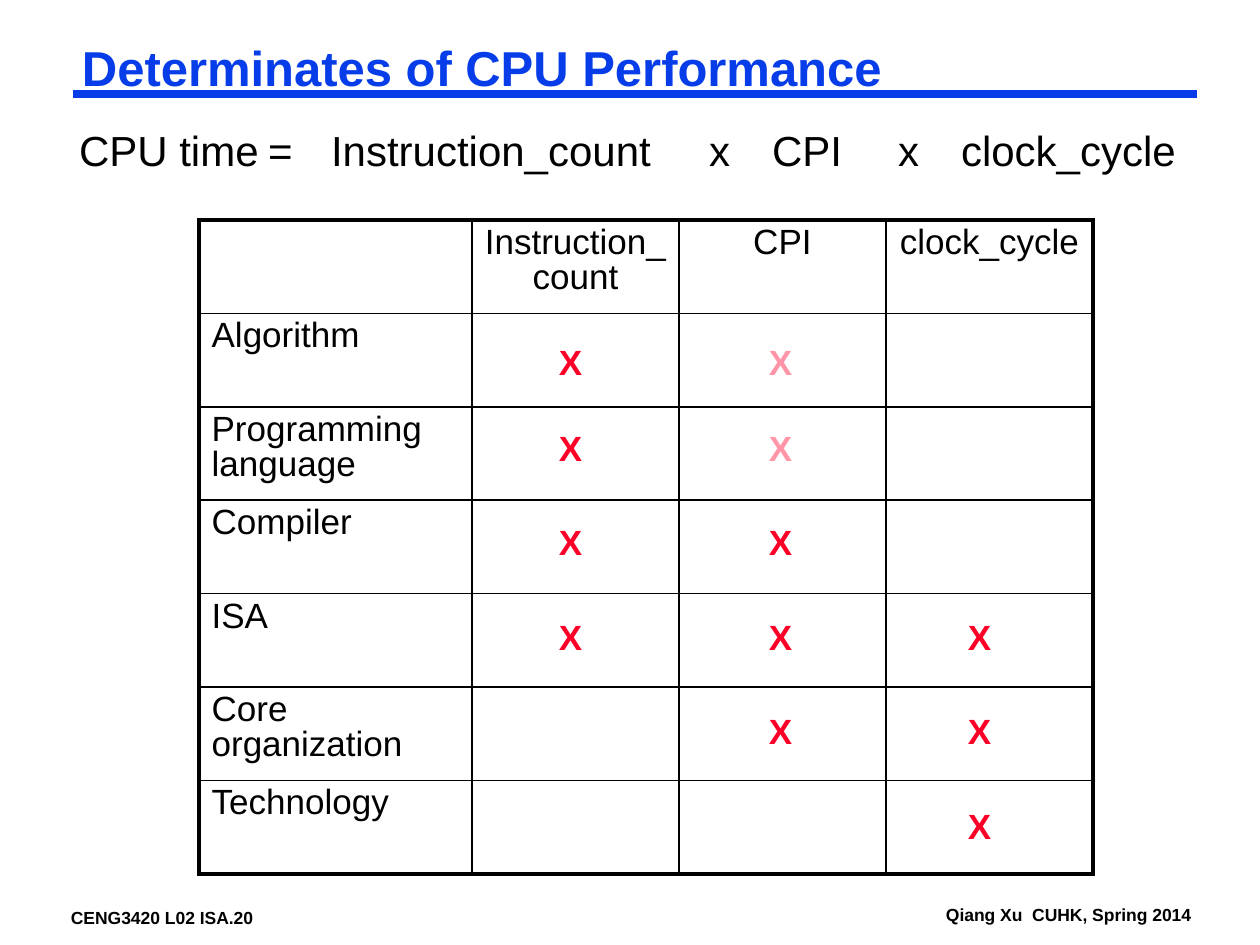
from lxml.etree import SubElement
from pptx import Presentation
from pptx.dml.color import RGBColor as RGB
from pptx.enum.shapes import MSO_CONNECTOR as Conn
from pptx.enum.text import MSO_ANCHOR as Anchor, MSO_AUTO_SIZE as Auto, PP_ALIGN as Align
from pptx.oxml.ns import qn
from pptx.util import Emu, Pt

COLORS = {"blue": "063DE8", "black": "000000", "red": "FC0128", "pink": "FF95A7"}
HEADS = ["", "Instruction_count", "CPI", "clock_cycle"]
# Row label and its marks: X strong, x weak, - none
ROWS = [
    ("Algorithm", "Xx-"),
    ("Programming language", "Xx-"),
    ("Compiler", "XX-"),
    ("ISA", "XXX"),
    ("Core organization", "-XX"),
    ("Technology", "--X"),
]
MARKS = {"X": "red", "x": "pink"}
MARK_X = [546, 756, 955]
MARK_Y = [334, 420, 514, 609, 703, 798]
FORMULA = [("CPU time", 79), ("=", 328), ("Instruction_count", 376), ("x", 719),
           ("CPI", 763), ("x", 857), ("clock_cycle", 913)]


def px(n):
    return Emu(round(n * 914400 / 126))


def color(name):
    return RGB.from_string(COLORS[name])


class Deck:
    font = "Arial"
    tight = (9, 4, 9, 4)
    roomy = (13, 6, 13, 6)

    def __init__(self):
        self.prs = Presentation()
        self.prs.slide_width, self.prs.slide_height = px(1260), px(945)
        self.slide = self.prs.slides.add_slide(self.prs.slide_layouts[1])
        self.shapes = self.slide.shapes

    def fill_text(self, frame, text, size, hue="black", bold=False, lead=1.0, align=Align.LEFT):
        para = frame.paragraphs[0]
        form = {"alignment": align, "line_spacing": lead, "space_before": Pt(0)}
        for key, val in form.items():
            setattr(para, key, val)
        run = para.add_run()
        run.text = text
        look = {"name": self.font, "size": Pt(size), "bold": bold}
        for key, val in look.items():
            setattr(run.font, key, val)
        run.font.color.rgb = color(hue)
        return para

    def frame(self, shape, insets, wrap):
        frame = shape.text_frame
        form = {"word_wrap": wrap, "auto_size": Auto.SHAPE_TO_FIT_TEXT,
                "vertical_anchor": Anchor.TOP}
        sides = ("margin_left", "margin_top", "margin_right", "margin_bottom")
        form.update(zip(sides, map(px, insets)))
        for key, val in form.items():
            setattr(frame, key, val)
        return frame

    def holder(self, index, box, insets, wrap):
        shape = self.slide.placeholders[index]
        for key, val in zip(("left", "top", "width", "height"), box):
            setattr(shape, key, px(val))
        return self.frame(shape, insets, wrap)

    def title(self, text, box):
        frame = self.holder(0, box, self.tight, False)
        self.fill_text(frame, text, 28, "blue", True, 0.87)

    def formula(self, parts, box):
        """Set the parts on one line, each at its own tab stop."""
        start = parts[0][1]
        frame = self.holder(1, box, (start, 4, 9, 4), True)
        text = "\t".join(part for part, _ in parts)
        props = self.fill_text(frame, text, 24, lead=0.9)._p.get_or_add_pPr()
        props.set("marL", "0")
        props.set("indent", "0")
        SubElement(props, qn("a:buNone"))
        stops = SubElement(props, qn("a:tabLst"))
        for _, left in parts[1:]:
            SubElement(stops, qn("a:tab"), pos=str(px(left - start)), algn="l")

    def text(self, text, box, size, hue="black", insets=tight, wrap=True):
        shape = self.shapes.add_textbox(*map(px, box))
        self.fill_text(self.frame(shape, insets, wrap), text, size, hue, True)

    def line(self, ends, width, hue):
        line = self.shapes.add_connector(Conn.STRAIGHT, *map(px, ends))
        line.line.width = Pt(width)
        line.line.color.rgb = color(hue)
        SubElement(line._element.spPr, qn("a:effectLst"))

    def border(self, cell, side, width):
        edge = SubElement(cell._tc.get_or_add_tcPr(), qn("a:ln" + side), w=str(Pt(width)))
        fill = SubElement(edge, qn("a:solidFill"))
        SubElement(fill, qn("a:srgbClr"), val=COLORS["black"])

    def table(self, rows, box, widths):
        high, wide = len(rows), len(widths)
        table = self.shapes.add_table(high, wide, *map(px, box)).table
        table.first_row = table.horz_banding = False
        for col, width in zip(table.columns, widths):
            col.width = px(width)
        for r, row in enumerate(rows):
            for c, text in enumerate(row):
                cell = table.cell(r, c)
                outer = {"L": c == 0, "R": c == wide - 1, "T": r == 0, "B": r == high - 1}
                for side, edge in outer.items():
                    self.border(cell, side, 2.25 if edge else 1)
                cell.fill.background()
                if text:
                    align = Align.LEFT if r else Align.CENTER
                    self.fill_text(cell.text_frame, text, 20, lead=0.9, align=align)


def main():
    deck = Deck()
    deck.title("Determinates of CPU Performance", (73, 42, 819, 58))
    deck.formula(FORMULA, (0, 126, 1207, 52))
    deck.line((73, 94, 1197, 94), 4.5, "blue")
    deck.text("CENG3420 L02 ISA.20", (62, 903, 204, 28), 10, wrap=False)
    deck.text("Qiang Xu  CUHK, Spring 2014", (937, 900, 282, 28), 10)

    body = [[label, "", "", ""] for label, _ in ROWS]
    deck.table([HEADS] + body, (199, 220, 894, 654), (273, 207, 207, 207))
    for (_, marks), top in zip(ROWS, MARK_Y):
        for mark, left in zip(marks, MARK_X):
            if mark in MARKS:
                deck.text("X", (left, top, 53, 54), 20, MARKS[mark], deck.roomy)
    deck.prs.save("out.pptx")


if __name__ == "__main__":
    main()
